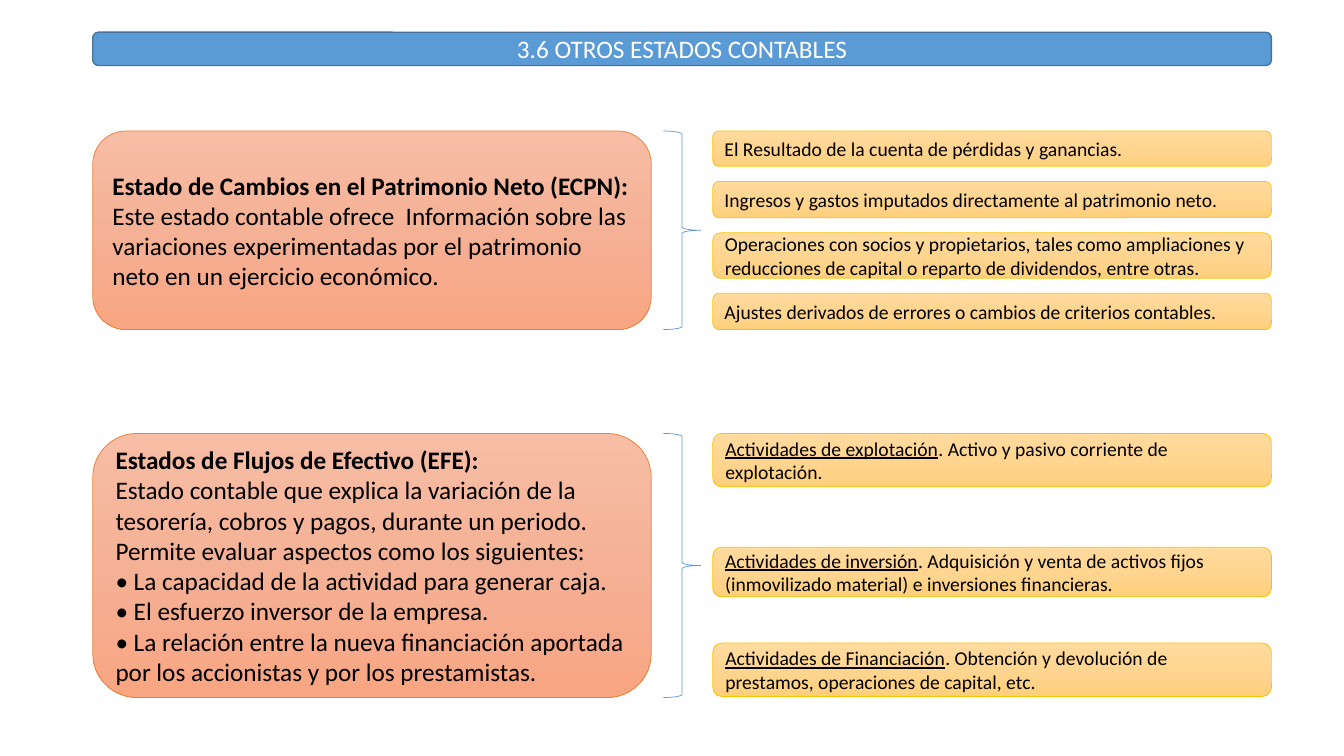
from copy import deepcopy

from pptx import Presentation
from pptx import util as u
from pptx.dml.color import RGBColor
from pptx.enum import shapes, text
from pptx.oxml.ns import qn

COLORS = {
    "title": "5B9BD5",
    "title_line": "43739E",
    "title_text": "FFFFFF",
    "statement_line": "ED7D31",
    "detail_line": "FFC000",
    "brace": "5B9BD5",
    "body_text": "000000",
}
GRADIENTS = {
    "statement": ["F7BDA5", "F5B196", "F8A582"],
    "detail": ["FFDB9E", "FFD590", "FFD07C"],
}
LEFT, RIGHT, BOX_WIDTH = 0.92, 7.07, 5.54


def add_outline(kind, left, top, width, height, line, weight):
    shape = slide.shapes.add_shape(
        kind, u.Inches(left), u.Inches(top), u.Inches(width), u.Inches(height))
    shape.shadow.inherit = False
    shape.fill.background()
    shape.line.color.rgb = RGBColor.from_string(COLORS[line])
    shape.line.width = u.Pt(weight)
    return shape


def add_box(style, left, top, height, size, paragraphs):
    shape = add_outline(shapes.MSO_SHAPE.ROUNDED_RECTANGLE, left, top,
                        BOX_WIDTH, height, f"{style}_line", 0.5)
    shape.fill.gradient()
    shape.fill.gradient_angle = 270
    stop_list = shape.element.spPr.find(".//" + qn("a:gsLst"))
    stop_list.insert(1, deepcopy(stop_list[0]))
    for index, stop in enumerate(shape.fill.gradient_stops):
        stop.position = index / 2
        stop.color.rgb = RGBColor.from_string(GRADIENTS[style][index])
    frame = shape.text_frame
    frame.word_wrap = True
    frame.vertical_anchor = text.MSO_ANCHOR.MIDDLE
    for index, (lead, rest) in enumerate(paragraphs):
        paragraph = frame.add_paragraph() if index else frame.paragraphs[0]
        paragraph.alignment = text.PP_ALIGN.LEFT
        paragraph.font.name = "Calibri"
        paragraph.font.size = u.Pt(size)
        paragraph.font.color.rgb = RGBColor.from_string(COLORS["body_text"])
        for content, is_lead in ((lead, True), (rest, False)):
            if content:
                run = paragraph.add_run()
                run.text = content
                run.font.name = "Calibri"
                run.font.size = u.Pt(size)
                run.font.color.rgb = RGBColor.from_string(COLORS["body_text"])
                run.font.bold = is_lead and style == "statement"
                run.font.underline = is_lead and style == "detail"


presentation = Presentation()
presentation.slide_width = u.Inches(13.33)
presentation.slide_height = u.Inches(7.5)
slide = presentation.slides.add_slide(presentation.slide_layouts[6])

title = add_outline(shapes.MSO_SHAPE.ROUNDED_RECTANGLE, LEFT, 0.32, 11.69, 0.33,
                    "title_line", 1)
title.fill.solid()
title.fill.fore_color.rgb = RGBColor.from_string(COLORS["title"])
title.text_frame.word_wrap = True
title.text_frame.vertical_anchor = text.MSO_ANCHOR.MIDDLE
heading = title.text_frame.paragraphs[0]
heading.text = "3.6 OTROS ESTADOS CONTABLES"
heading.alignment = text.PP_ALIGN.CENTER
heading.font.name = "Calibri"
heading.font.size = u.Pt(18)
heading.font.color.rgb = RGBColor.from_string(COLORS["title_text"])

statements = [
    (1.3, 1.97, [
        ("Estado de Cambios en el Patrimonio Neto (ECPN): ",
         "Este estado contable ofrece  Información sobre las variaciones "
         "experimentadas por el patrimonio neto en un ejercicio económico."),
    ], [
        (1.3, 0.35, "", "El Resultado de la cuenta de pérdidas y ganancias."),
        (1.8, 0.36, "", "Ingresos y gastos imputados directamente al patrimonio neto."),
        (2.31, 0.45, "", "Operaciones con socios y propietarios, tales como ampliaciones y "
                         "reducciones de capital o reparto de dividendos, entre otras."),
        (2.91, 0.36, "", "Ajustes derivados de errores o cambios de criterios contables."),
    ]),
    (4.3, 2.62, [
        ("Estados de Flujos de Efectivo (EFE):", ""),
        ("", "Estado contable que explica la variación de la tesorería, cobros y pagos, "
             "durante un periodo."),
        ("", "Permite evaluar aspectos como los siguientes:"),
        ("", "• La capacidad de la actividad para generar caja."),
        ("", "• El esfuerzo inversor de la empresa."),
        ("", "• La relación entre la nueva financiación aportada por los accionistas "
             "y por los prestamistas."),
    ], [
        (4.3, 0.53, "Actividades de explotación",
         ". Activo y pasivo corriente de explotación."),
        (5.43, 0.49, "Actividades de inversión",
         ". Adquisición y venta de activos fijos (inmovilizado material) "
         "e inversiones financieras."),
        (6.38, 0.53, "Actividades de Financiación",
         ". Obtención y devolución de prestamos, operaciones de capital, etc."),
    ]),
]

for top, height, paragraphs, details in statements:
    add_box("statement", LEFT, top, height, 18, paragraphs)
    for detail_top, detail_height, lead, rest in details:
        add_box("detail", RIGHT, detail_top, detail_height, 14, [(lead, rest)])
    add_outline(shapes.MSO_SHAPE.RIGHT_BRACE, 6.58, top, 0.37, height, "brace", 0.5)

presentation.save("out.pptx")
